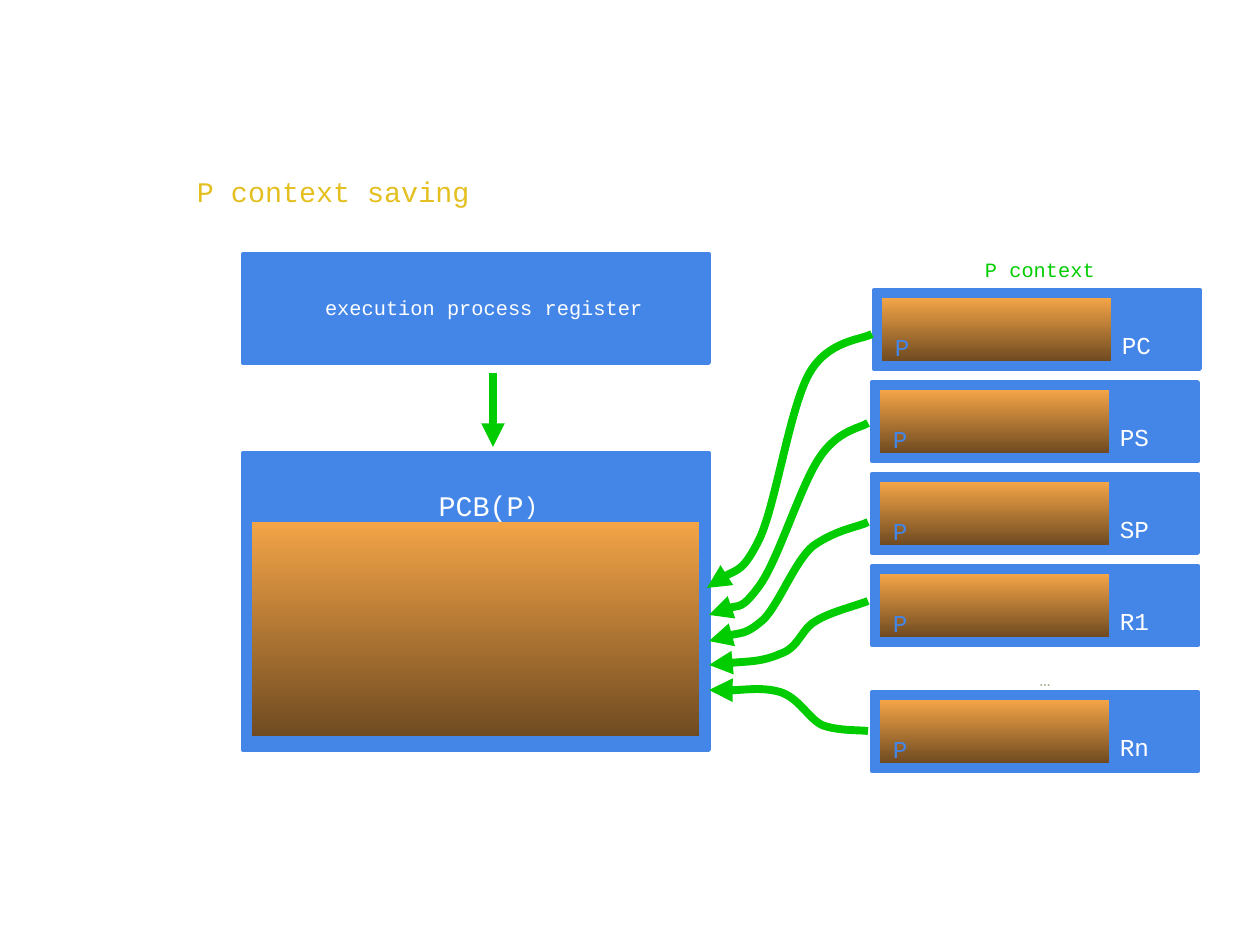
from pptx import Presentation
from pptx.dml.color import RGBColor
from pptx.enum.shapes import MSO_CONNECTOR, MSO_SHAPE
from pptx.enum.text import MSO_ANCHOR, PP_ALIGN
from pptx.oxml.xmlchemy import OxmlElement
from pptx.util import Emu, Inches, Pt

BLUE = RGBColor(0x44, 0x86, 0xE8)
ORANGE = RGBColor(0xF3, 0xA4, 0x47)
BROWN = RGBColor(0x70, 0x4B, 0x21)
GREEN = RGBColor(0x00, 0xCC, 0x00)
YELLOW = RGBColor(0xE4, 0xBF, 0x20)
SAGE = RGBColor(0xA5, 0xB5, 0x92)
WHITE = RGBColor(0xFF, 0xFF, 0xFF)
SCALE = 914400 / 126
LABEL_INDENT = 26

REGISTERS = [("PC", 874, 290), ("PS", 872, 382), ("SP", 872, 474),
             ("R1", 872, 566), ("Rn", 872, 692)]

SAVE_CURVES = [
    [(868, 731), (861, 730), (837, 731), (822, 725), (808, 718),
     (799, 698), (780, 692), (762, 687), (725, 692), (709, 690)],
    [(868, 601), (859, 605), (830, 612), (816, 621), (801, 629),
     (799, 648), (780, 654), (762, 662), (723, 663), (709, 665)],
    [(868, 522), (859, 527), (837, 529), (813, 546), (795, 561),
     (780, 602), (764, 619), (746, 635), (721, 636), (709, 641)],
    [(868, 423), (861, 428), (838, 430), (820, 457), (801, 484),
     (779, 558), (760, 585), (741, 611), (719, 609), (709, 615)],
    [(872, 334), (862, 340), (828, 340), (809, 374), (790, 408),
     (776, 503), (760, 538), (743, 573), (718, 578), (707, 588)],
]


def px(*lengths):
    return [Emu(round(length * SCALE)) for length in lengths]


class Sketch:
    """Draws styled elements on the current slide."""

    font = "Courier New"

    def __init__(self, page):
        self.page = page

    def fill_text(self, box, spans, color, align=PP_ALIGN.LEFT, indent=0, inset=13):
        frame = box.text_frame
        frame.word_wrap = True
        frame.vertical_anchor = MSO_ANCHOR.TOP
        frame.margin_left, frame.margin_right = px(inset, inset)
        para = frame.paragraphs[0]
        para.alignment = align
        para.space_before = Pt(spans[0][1] / 2)
        para.font.name = self.font
        para.font.color.rgb = color
        para._p.get_or_add_pPr().set("marL", str(px(indent)[0]))
        for text, size in spans:
            span = para.add_run()
            span.text = text
            span.font.size = Pt(size)
            span.font._element.set("baseline", "-25000")

    def text(self, bounds, spans, color, **layout):
        box = self.page.shapes.add_textbox(*px(*bounds))
        self.fill_text(box, spans, color, **layout)

    def label(self, bounds, spans, color=WHITE, align=PP_ALIGN.CENTER):
        self.text(bounds, spans, color, align=align, indent=LABEL_INDENT, inset=3)

    def rectangle(self, bounds):
        box = self.page.shapes.add_shape(MSO_SHAPE.RECTANGLE, *px(*bounds))
        box.shadow.inherit = False
        return box

    def frame(self, bounds):
        box = self.rectangle(bounds)
        box.fill.solid()
        box.fill.fore_color.rgb = BLUE
        box.line.color.rgb = BLUE
        box.line.width = Pt(2.25)

    def content(self, bounds):
        box = self.rectangle(bounds)
        box.fill.gradient()
        box.fill.gradient_angle = 270
        for stop, color in zip(box.fill.gradient_stops, (ORANGE, BROWN)):
            stop.color.rgb = color
        box.line.fill.background()
        return box

    def arrowhead(self, line):
        line.color.rgb = GREEN
        line.width = Pt(4.5)
        head = OxmlElement("a:tailEnd")
        head.set("type", "triangle")
        line._get_or_add_ln().append(head)

    def arrow(self, *ends):
        arrow = self.page.shapes.add_connector(MSO_CONNECTOR.STRAIGHT, *px(*ends))
        self.arrowhead(arrow.line)
        arrow._element.spPr.append(OxmlElement("a:effectLst"))

    def curve(self, points):
        builder = self.page.shapes.build_freeform(*points[0], scale=SCALE)
        builder.add_line_segments(points[1:], close=False)
        curve = builder.convert_to_shape()
        curve.shadow.inherit = False
        curve.fill.background()
        self.arrowhead(curve.line)
        outline = curve._element.xpath(".//a:path")[0]
        segments = curve._element.xpath(".//a:lnTo")
        for start in range(0, len(segments), 3):
            bezier = OxmlElement("a:cubicBezTo")
            for segment in segments[start:start + 3]:
                bezier.append(segment[0])
                outline.remove(segment)
            outline.append(bezier)

    def register(self, name, left, top):
        self.frame((left, top, 326, 79))
        box = self.content((left + 8, top + 8, 229, 63))
        self.fill_text(box, [("P", 24)], BLUE)
        self.label((left + 219, top + 6, 100, 63), [(name, 24)], align=PP_ALIGN.LEFT)


def main():
    deck = Presentation()
    deck.slide_width, deck.slide_height = Inches(10), Inches(7.5)
    sketch = Sketch(deck.slides.add_slide(deck.slide_layouts[6]))

    for register in REGISTERS:
        sketch.register(*register)
    sketch.label((868, 641, 328, 47), [("…", 18)], SAGE)

    sketch.frame((243, 254, 466, 109))
    sketch.frame((243, 453, 466, 297))
    sketch.label((241, 449, 469, 53), [("PCB(P", 28), (")", 24)])
    sketch.arrow(493, 373, 493, 447)
    sketch.label((243, 265, 456, 97), [("execution process register", 20)])
    sketch.text((888, 227, 304, 54), [("P context", 20)], GREEN, align=PP_ALIGN.CENTER)

    sketch.content((252, 522, 447, 214))
    for points in SAVE_CURVES:
        sketch.curve(points)
    sketch.text((184, 135, 987, 72), [("P context saving", 28)], YELLOW)

    deck.save("out.pptx")


if __name__ == "__main__":
    main()
